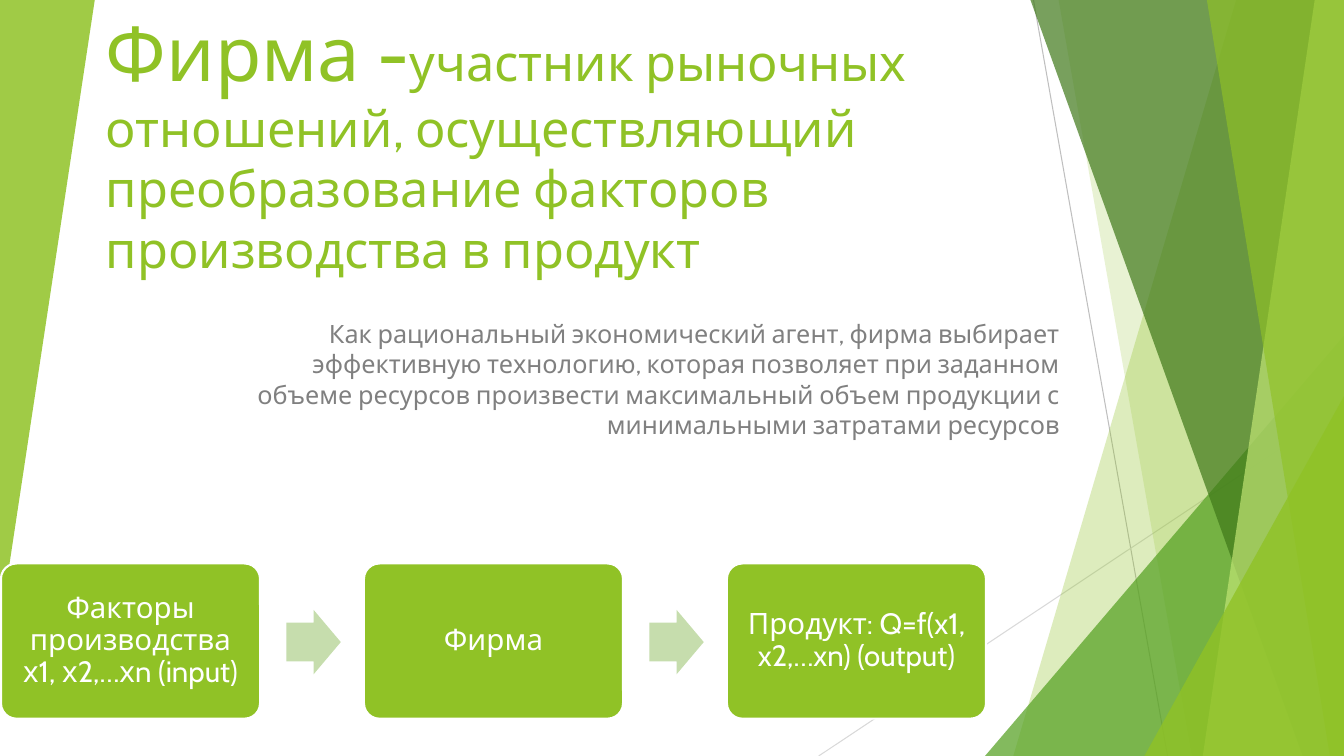
from lxml.etree import SubElement
from pptx import Presentation
from pptx.dml.color import RGBColor
from pptx.enum.shapes import MSO_CONNECTOR as Line, MSO_SHAPE as Shape
from pptx.enum.text import MSO_ANCHOR as Anchor, PP_ALIGN as Align
from pptx.oxml.ns import qn
from pptx.util import Inches, Pt

FONT = "Cabin"
GREEN = "90C226"
WHITE = "FFFFFF"
LINES = [
    ((10.25, 0), (11.58, 7.5), "BFBFBF"),
    ((8.12, 7.5), (13.33, 4.03), "D9D9D9"),
]
FACETS = [
    ([(12.26, 0), (10.05, 7.5), (13.33, 7.5), (13.33, 0)], GREEN, 30),
    ([(10.5, 0), (11.82, 7.5), (13.33, 7.5), (13.33, 0)], GREEN, 20),
    ([(9.77, 7.5), (13.33, 3.33), (13.33, 7.5)], "54A021", 72),
    ([(10.22, 0), (12.92, 7.5), (13.33, 7.5), (13.33, 0)], "3F7819", 70),
    ([(13.04, 0), (11.93, 7.5), (13.33, 7.5), (13.33, 0)], "C0E474", 70),
    ([(11.97, 0), (13.19, 7.5), (13.33, 7.5), (13.33, 0)], GREEN, 65),
    ([(0, 0), (0.94, 0), (0, 6.22)], GREEN, 85),
    ([(11.35, 7.5), (13.33, 3.93), (13.33, 7.5)], GREEN, 80),
]
STEPS = [
    "Факторы производства х1, х2,…хn (input)",
    "Фирма",
    "Продукт: Q=f(x1, x2,…xn) (output)",
]
LEFT, PITCH = 0.01, 3.6


def color(code):
    """Turn a hex string into a colour."""
    return RGBColor.from_string(code)


def style(font, size, code):
    """Set the face, size and colour of a font."""
    font.name = FONT
    font.size = Pt(size)
    font.color.rgb = color(code)


def paint(shape, code):
    """Give a shape a plain fill with no outline or shadow."""
    shape.shadow.inherit = False
    shape.fill.solid()
    shape.fill.fore_color.rgb = color(code)
    shape.line.fill.background()


def add_line(slide, start, end, code):
    """Draw a thin straight line."""
    ends = [Inches(v) for v in start + end]
    line = slide.shapes.add_connector(Line.STRAIGHT, *ends)
    line.line.color.rgb = color(code)
    line.line.width = Pt(0.75)
    SubElement(line._element.spPr, qn("a:effectLst"))


def add_facet(slide, points, code, alpha):
    """Draw a see-through polygon, alpha in percent."""
    first, *rest = [(Inches(x), Inches(y)) for x, y in points]
    pen = slide.shapes.build_freeform(*first)
    pen.add_line_segments(rest, close=True)
    facet = pen.convert_to_shape()
    paint(facet, code)
    tint = facet._element.spPr.find(qn("a:solidFill"))[0]
    SubElement(tint, qn("a:alpha"), val=str(alpha * 1000))


def add_text(slide, box, runs, code, align, anchor):
    """Add a wrapped paragraph made of (text, size) runs."""
    frame = slide.shapes.add_textbox(*[Inches(v) for v in box]).text_frame
    frame.word_wrap = True
    frame.vertical_anchor = anchor
    para = frame.paragraphs[0]
    para.alignment = align
    for text, size in runs:
        run = para.add_run()
        run.text = text
        style(run.font, size, code)


def add_step(slide, left, text):
    """Add a rounded box with a centred caption."""
    box = slide.shapes.add_shape(
        Shape.ROUNDED_RECTANGLE, Inches(left), Inches(5.59), Inches(2.57), Inches(1.54))
    box.adjustments[0] = 0.1
    paint(box, GREEN)
    box.line.color.rgb = color(WHITE)
    box.line.width = Pt(1.5)
    frame = box.text_frame
    frame.word_wrap = True
    frame.vertical_anchor = Anchor.MIDDLE
    frame.margin_left = frame.margin_right = Inches(0.12)
    para = frame.paragraphs[0]
    para.text = text
    para.alignment = Align.CENTER
    para.line_spacing = 0.9
    style(para.font, 21, WHITE)


def add_arrow(slide, left):
    """Add a pale block arrow between two boxes."""
    arrow = slide.shapes.add_shape(
        Shape.RIGHT_ARROW, Inches(left), Inches(6.05), Inches(0.54), Inches(0.64))
    arrow.adjustments[0] = 0.6
    arrow.adjustments[1] = 0.5
    paint(arrow, "C6DDAD")


def main():
    """Build the slide and save it."""
    deck = Presentation()
    deck.slide_width, deck.slide_height = Inches(13.33), Inches(7.5)
    slide = deck.slides.add_slide(deck.slide_layouts[6])
    for line in LINES:
        add_line(slide, *line)
    for facet in FACETS:
        add_facet(slide, *facet)
    title = [
        ("Фирма -", 54),
        ("участник рыночных отношений, осуществляющий преобразование "
         "факторов производства в продукт", 36),
    ]
    add_text(slide, (0.95, 0.19, 8.5, 2.62), title, GREEN, Align.LEFT, Anchor.BOTTOM)
    note = ("Как рациональный экономический агент, фирма выбирает эффективную "
            "технологию, которая позволяет при заданном объеме ресурсов произвести "
            "максимальный объем продукции с минимальными затратами ресурсов")
    add_text(slide, (2.11, 3.11, 8.5, 1.6), [(note, 18)], "808080", Align.RIGHT, Anchor.TOP)
    for i, text in enumerate(STEPS):
        left = LEFT + i * PITCH
        if i:
            add_arrow(slide, left - 0.77)
        add_step(slide, left, text)
    deck.save("out.pptx")


if __name__ == "__main__":
    main()
